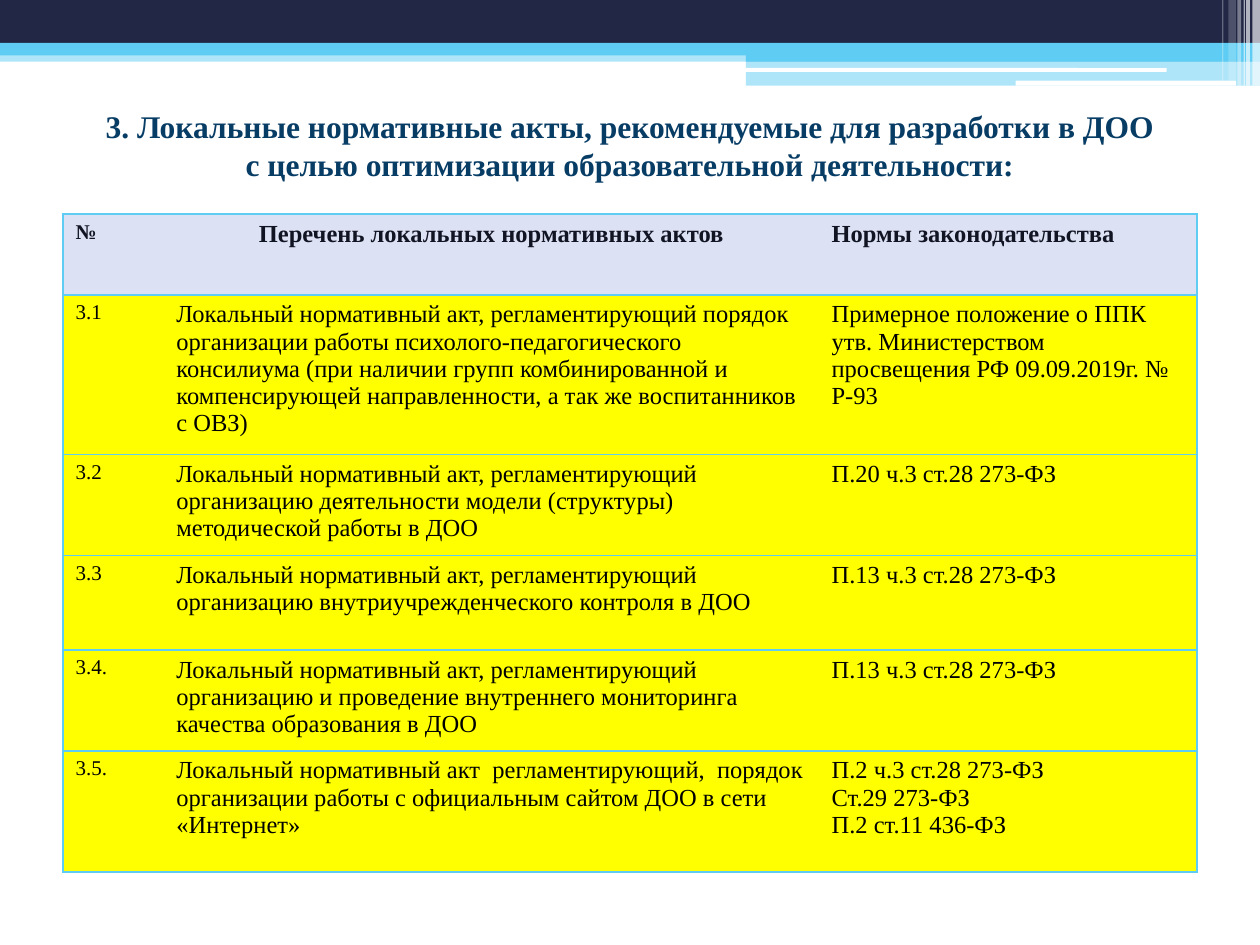
"""Slide listing recommended local regulations in a table."""
from dataclasses import dataclass

from lxml import etree
from pptx import Presentation
from pptx import util as u
from pptx.dml.color import RGBColor
from pptx.enum import shapes, text
from pptx.oxml.ns import qn

PX = 9144
FONT = "Times New Roman"
SKY, NAVY, WHITE = "5ECCF3", "212745", "FFFFFF"
HEAD, BODY, INK = "DCE1F4", "FFFF00", "000000"
ACT = "Локальный нормативный акт"


@dataclass
class Bar:
    x: int
    y: int
    w: int
    h: int
    color: str
    alpha: int = 100
    tall: bool = False
    soft: bool = False


@dataclass
class Row:
    num: str
    act: str
    norms: tuple[str, ...]
    h: int


BARS = [
    Bar(0, 40, 1000, 9, SKY, 50),
    Bar(0, 0, 1000, 34, NAVY),
    Bar(0, 34, 1000, 10, SKY),
    Bar(592, 39, 408, 10, SKY),
    Bar(592, 48, 408, 20, SKY, 50),
    Bar(591, 54, 335, 3, WHITE, soft=True),
    Bar(806, 64, 175, 4, WHITE, soft=True),
    *(Bar(x, 0, w, h, WHITE, a) for x, w, h, a in (
        (994, 6, 68, 65), (989, 3, 68, 65), (987, 1, 68, 60),
        (982, 3, 68, 40), (975, 6, 64, 20), (970, 1, 64, 30))),
]
TITLE = ("3. Локальные нормативные акты, рекомендуемые для разработки в ДОО",
         "с целью оптимизации образовательной деятельности:")
COLS = (80, 520, 300)
ROWS = [
    Row("№", "Перечень локальных нормативных актов",
        ("Нормы законодательства",), 64),
    Row("3.1", f"{ACT}, регламентирующий порядок организации работы "
        "психолого-педагогического консилиума (при наличии групп "
        "комбинированной и компенсирующей направленности, а так же "
        "воспитанников с ОВЗ)",
        ("Примерное положение о ППК утв. Министерством просвещения РФ "
         "09.09.2019г. № Р-93",), 117),
    Row("3.2", f"{ACT}, регламентирующий организацию деятельности модели "
        "(структуры) методической работы в ДОО",
        ("П.20 ч.3 ст.28 273-ФЗ",), 75),
    Row("3.3", f"{ACT}, регламентирующий организацию внутриучрежденческого "
        "контроля в ДОО", ("П.13 ч.3 ст.28 273-ФЗ",), 75),
    Row("3.4.", f"{ACT}, регламентирующий организацию и проведение "
        "внутреннего мониторинга качества образования в ДОО",
        ("П.13 ч.3 ст.28 273-ФЗ",), 75),
    Row("3.5.", f"{ACT}  регламентирующий,  порядок организации работы с "
        "официальным сайтом ДОО в сети «Интернет»",
        ("П.2 ч.3 ст.28 273-ФЗ", "Ст.29 273-ФЗ", "П.2 ст.11 436-ФЗ"), 96),
]


def rgb(color: str) -> RGBColor:
    return RGBColor.from_string(color)


def box(*px: int) -> list[u.Emu]:
    return [u.Emu(n * PX) for n in px]


def add_bar(slide, bar: Bar) -> None:
    kind = shapes.MSO_SHAPE.ROUNDED_RECTANGLE if bar.soft else shapes.MSO_SHAPE.RECTANGLE
    shape = slide.shapes.add_shape(kind, *box(bar.x, bar.y, bar.w, bar.h))
    shape.shadow.inherit = False
    shape.line.fill.background()
    shape.fill.solid()
    shape.fill.fore_color.rgb = rgb(bar.color)
    if bar.alpha < 100:
        tone = shape.fill._xPr.find(".//" + qn("a:srgbClr"))
        etree.SubElement(tone, qn("a:alpha"), val=str(bar.alpha * 1000))


def add_run(para, words: str, size: int, color: str, bold: bool) -> None:
    run = para.add_run()
    run.text = words
    run.font.name = FONT
    run.font.size = u.Pt(size)
    run.font.bold = bold
    run.font.color.rgb = rgb(color)


def add_title(slide) -> None:
    frame = slide.shapes.add_textbox(*box(50, 60, 900, 110)).text_frame
    frame.word_wrap = True
    frame.vertical_anchor = text.MSO_ANCHOR.MIDDLE
    para = frame.paragraphs[0]
    para.alignment = text.PP_ALIGN.CENTER
    for i, line in enumerate(TITLE):
        if i:
            para.add_line_break()
        add_run(para, line, 18, "073C65", True)


def set_edges(cell, shown: str) -> None:
    props = cell._tc.get_or_add_tcPr()
    for i, side in enumerate("LRTB"):
        line = etree.Element(qn(f"a:ln{side}"), w=str(u.Pt(1)))
        if side in shown:
            fill = etree.SubElement(line, qn("a:solidFill"))
            etree.SubElement(fill, qn("a:srgbClr"), val=SKY)
        else:
            etree.SubElement(line, qn("a:noFill"))
        props.insert(i, line)


def fill_cell(cell, lines: tuple[str, ...], size: int, head: bool) -> None:
    cell.fill.solid()
    cell.fill.fore_color.rgb = rgb(HEAD if head else BODY)
    frame = cell.text_frame
    for i, line in enumerate(lines):
        para = frame.add_paragraph() if i else frame.paragraphs[0]
        add_run(para, line, size, "111422" if head else INK, head)


def add_grid(slide) -> None:
    high = sum(row.h for row in ROWS)
    grid = slide.shapes.add_table(
        len(ROWS), len(COLS), *box(50, 170, sum(COLS), high)).table
    grid.horz_banding = False
    for col, wide in zip(grid.columns, COLS):
        col.width = u.Emu(wide * PX)
    for r, row in enumerate(ROWS):
        grid.rows[r].height = u.Emu(row.h * PX)
        parts = ((row.num,), 12, "LTB"), ((row.act,), 14, "TB"), (row.norms, 14, "RTB")
        for c, (lines, size, edges) in enumerate(parts):
            fill_cell(grid.cell(r, c), lines, size, r == 0)
            set_edges(grid.cell(r, c), edges)
    grid.cell(0, 1).text_frame.paragraphs[0].alignment = text.PP_ALIGN.CENTER


def main() -> None:
    deck = Presentation()
    deck.slide_width, deck.slide_height = box(1000, 750)
    slide = deck.slides.add_slide(deck.slide_layouts[6])
    for bar in BARS:
        add_bar(slide, bar)
    add_title(slide)
    add_grid(slide)
    deck.save("out.pptx")


if __name__ == "__main__":
    main()
